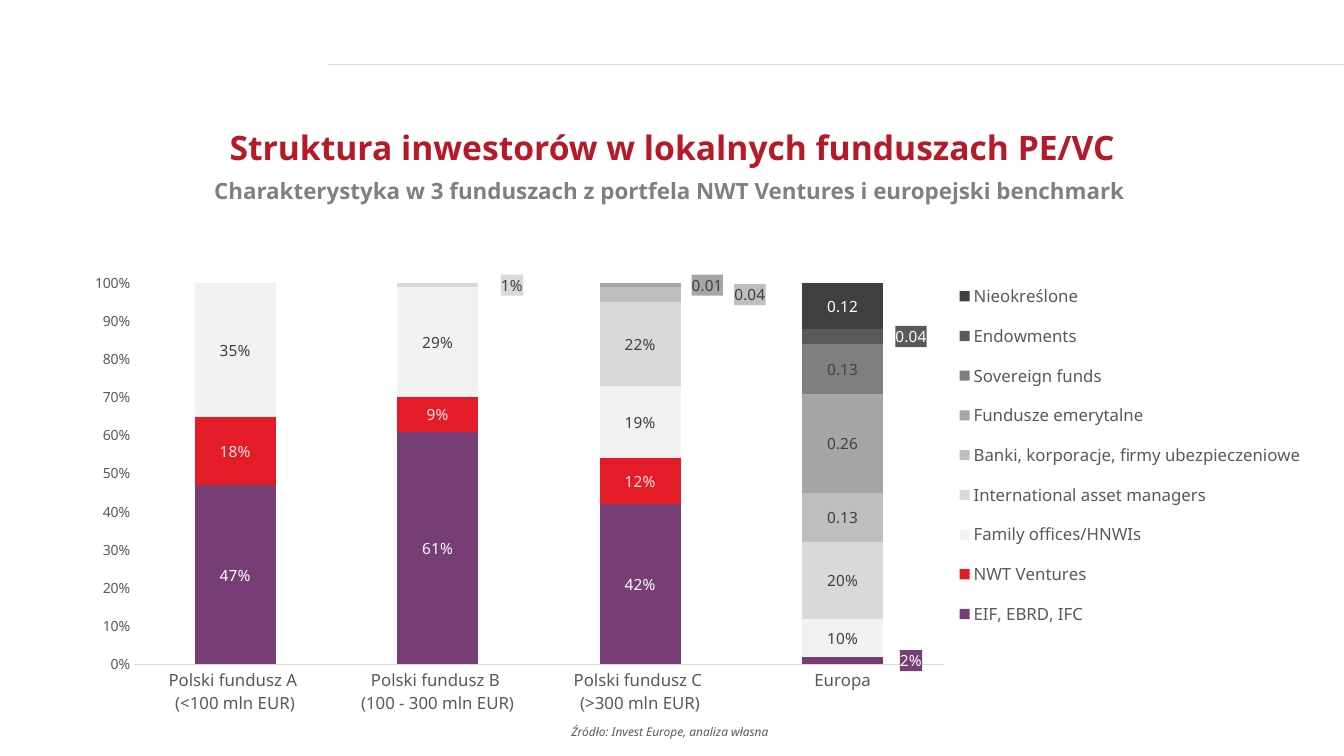
from lxml import etree
from pptx import Presentation
from pptx.chart.data import CategoryChartData
from pptx.dml.color import RGBColor
from pptx.enum.chart import XL_CHART_TYPE as ChartType, XL_LABEL_POSITION as LabelPos
from pptx.enum.chart import XL_LEGEND_POSITION as LegendPos, XL_TICK_MARK as Tick
from pptx.enum.shapes import MSO_CONNECTOR
from pptx.enum.text import MSO_AUTO_SIZE, PP_ALIGN
from pptx.oxml import parse_xml
from pptx.oxml.ns import nsdecls, qn
from pptx.util import Inches, Pt

FONT = "Noto Sans"
COLORS = {
    "rule": "D9D9D9", "title": "B61928", "subtitle": "808080", "text": "595959",
    "purple": "773D75", "red": "E41C27", "pink": "FFE5E5", "white": "FFFFFF",
    "grey1": "F2F2F2", "grey2": "D9D9D9", "grey3": "BFBFBF", "grey4": "A6A6A6",
    "grey5": "7F7F7F", "grey6": "595959", "grey7": "404040",
}
NO_LEADER_LINES = (
    f'<c:extLst {nsdecls("c")}><c:ext uri="{{CE6537A1-D6FC-4f65-9D91-7224C49458BB}}" '
    'xmlns:c15="http://schemas.microsoft.com/office/drawing/2012/chart">'
    '<c15:showLeaderLines val="0"/></c:ext></c:extLst>')


def style(font, size, color, bold=False, italic=False):
    font.name, font.size = FONT, Pt(size)
    font.bold, font.italic = bold, italic
    font.color.rgb = RGBColor.from_string(COLORS[color])


def manual_layout(x, y, w=None, h=None, inner=False, edge=False):
    target = '<c:layoutTarget val="inner"/>' if inner else ""
    modes = '<c:xMode val="edge"/><c:yMode val="edge"/>' if edge else ""
    size = f'<c:w val="{w}"/><c:h val="{h}"/>' if w else ""
    return parse_xml(
        f'<c:layout {nsdecls("c")}><c:manualLayout>{target}{modes}'
        f'<c:x val="{x}"/><c:y val="{y}"/>{size}</c:manualLayout></c:layout>')


prs = Presentation()
prs.slide_width, prs.slide_height = Inches(13.33), Inches(7.5)
slide = prs.slides.add_slide(prs.slide_layouts[6])

# Header rule
rule = slide.shapes.add_connector(
    MSO_CONNECTOR.STRAIGHT, Inches(13.33), Inches(0.64), Inches(3.25), Inches(0.64))
rule.line.color.rgb = RGBColor.from_string(COLORS["rule"])
rule.line.width = Pt(0.75)
etree.SubElement(rule._element.spPr, qn("a:effectLst"))

# Title, subtitle and source
for words, box, size, color, bold, italic in [
    ("Struktura inwestorów w lokalnych funduszach PE/VC",
     (2.11, 1.21, 9.11, 0.5), 24, "title", True, False),
    ("Charakterystyka w 3 funduszach z portfela NWT Ventures i europejski benchmark",
     (2.02, 1.71, 9.24, 0.37), 16, "subtitle", True, False),
    ("Źródło: Invest Europe, analiza własna",
     (5.55, 7.14, 2.19, 0.24), 8.5, "text", False, True),
]:
    frame = slide.shapes.add_textbox(*map(Inches, box)).text_frame
    frame.word_wrap = False
    frame.auto_size = MSO_AUTO_SIZE.SHAPE_TO_FIT_TEXT
    frame.text = words
    frame.paragraphs[0].alignment = PP_ALIGN.CENTER
    style(frame.paragraphs[0].runs[0].font, size, color, bold, italic)

# Investor groups: name, shares, fill, label color, label format,
# and the bar whose label is moved aside with its distance
investors = [
    ("EIF, EBRD, IFC", (0.47, 0.61, 0.42, 0.02), "purple", "white", "0%", (3, 0.056)),
    ("NWT Ventures", (0.18, 0.09, 0.12, None), "red", "pink", "0%", None),
    ("Family offices/HNWIs", (0.35, 0.29, 0.19, 0.1), "grey1", "grey7", "0%", None),
    ("International asset managers", (None, 0.01, 0.22, 0.2),
     "grey2", "grey7", "0%", (1, 0.061)),
    ("Banki, korporacje, firmy ubezpieczeniowe", (None, None, 0.04, 0.13),
     "grey3", "grey7", "General", (2, 0.09)),
    ("Fundusze emerytalne", (None, None, 0.01, 0.26),
     "grey4", "grey7", "General", (2, 0.055)),
    ("Sovereign funds", (None, None, None, 0.13), "grey5", "grey7", "General", None),
    ("Endowments", (None, None, None, 0.04), "grey6", "white", "General", (3, 0.056)),
    ("Nieokreślone", (None, None, None, 0.12), "grey7", "white", "General", None),
]
shares = CategoryChartData()
shares.categories = [
    "Polski fundusz A \n(<100 mln EUR)", "Polski fundusz B \n(100 - 300 mln EUR)",
    "Polski fundusz C \n(>300 mln EUR)", "Europa"]
for name, values, *_, number_format, _ in investors:
    shares.add_series(name, values, number_format)

# Chart
chart = slide.shapes.add_chart(
    ChartType.COLUMN_STACKED_100, Inches(0.88), Inches(2.66),
    Inches(12.1), Inches(4.51), shares).chart
chart.has_title = False
style(chart.font, 10, "text")
structure = chart.plots[0]
structure.gap_width, structure.overlap = 150, 100
structure.vary_by_categories = False
plot_area = chart._chartSpace.chart.plotArea
for old_layout in plot_area.findall(qn("c:layout")):
    plot_area.remove(old_layout)
plot_area.insert(0, manual_layout(0.037, 0.033, 0.664, 0.839, inner=True, edge=True))

# Axes
funds, percent = chart.category_axis, chart.value_axis
for axis, size in ((funds, 12), (percent, 10)):
    axis.major_tick_mark = axis.minor_tick_mark = Tick.NONE
    axis.has_major_gridlines = False
    style(axis.tick_labels.font, size, "text")
funds.format.line.color.rgb = RGBColor.from_string(COLORS["rule"])
funds.format.line.width = Pt(0.75)
percent.format.line.fill.background()
percent.minimum_scale, percent.maximum_scale, percent.major_unit = 0, 1, 0.1
percent.tick_labels.number_format = "0%"
percent.tick_labels.number_format_is_linked = False

# Legend
chart.has_legend = True
chart.legend.position = LegendPos.RIGHT
chart.legend.include_in_layout = False
style(chart.legend.font, 12, "text")
legend_xml = chart.legend._element
for old_layout in legend_xml.findall(qn("c:layout")):
    legend_xml.remove(old_layout)
legend_xml.find(qn("c:legendPos")).addnext(
    manual_layout(0.711, 0.0, 0.288, 0.823, edge=True))

# Series fills and labels
for group, (_, _, fill, ink, number_format, moved) in zip(structure.series, investors):
    group.format.fill.solid()
    group.format.fill.fore_color.rgb = RGBColor.from_string(COLORS[fill])
    labels = group.data_labels
    labels.show_value = True
    labels.position = LabelPos.CENTER
    labels.number_format = number_format
    labels.number_format_is_linked = False
    style(labels.font, 11, ink)
    labels_xml = group._element.find(qn("c:dLbls"))
    for leader in labels_xml.findall(qn("c:showLeaderLines")):
        leader.set("val", "0")
    labels_xml.append(parse_xml(NO_LEADER_LINES))

    # Label beside its bar, on a patch of the series color
    if moved:
        bar, distance = moved
        label = group.points[bar].data_label
        style(label.font, 11, ink)
        label.position = LabelPos.CENTER
        label_xml = labels_xml.find(qn("c:dLbl"))
        for tag in ("c:layout", "c:numFmt", "c:spPr"):
            for preset in label_xml.findall(qn(tag)):
                label_xml.remove(preset)
        index = label_xml.find(qn("c:idx"))
        index.addnext(parse_xml(
            f'<c:spPr {nsdecls("c", "a")}><a:solidFill>'
            f'<a:srgbClr val="{COLORS[fill]}"/></a:solidFill>'
            '<a:ln><a:noFill/></a:ln></c:spPr>'))
        index.addnext(parse_xml(
            f'<c:numFmt {nsdecls("c")} formatCode="{number_format}" sourceLinked="0"/>'))
        index.addnext(manual_layout(distance, 0))

prs.save("out.pptx")
